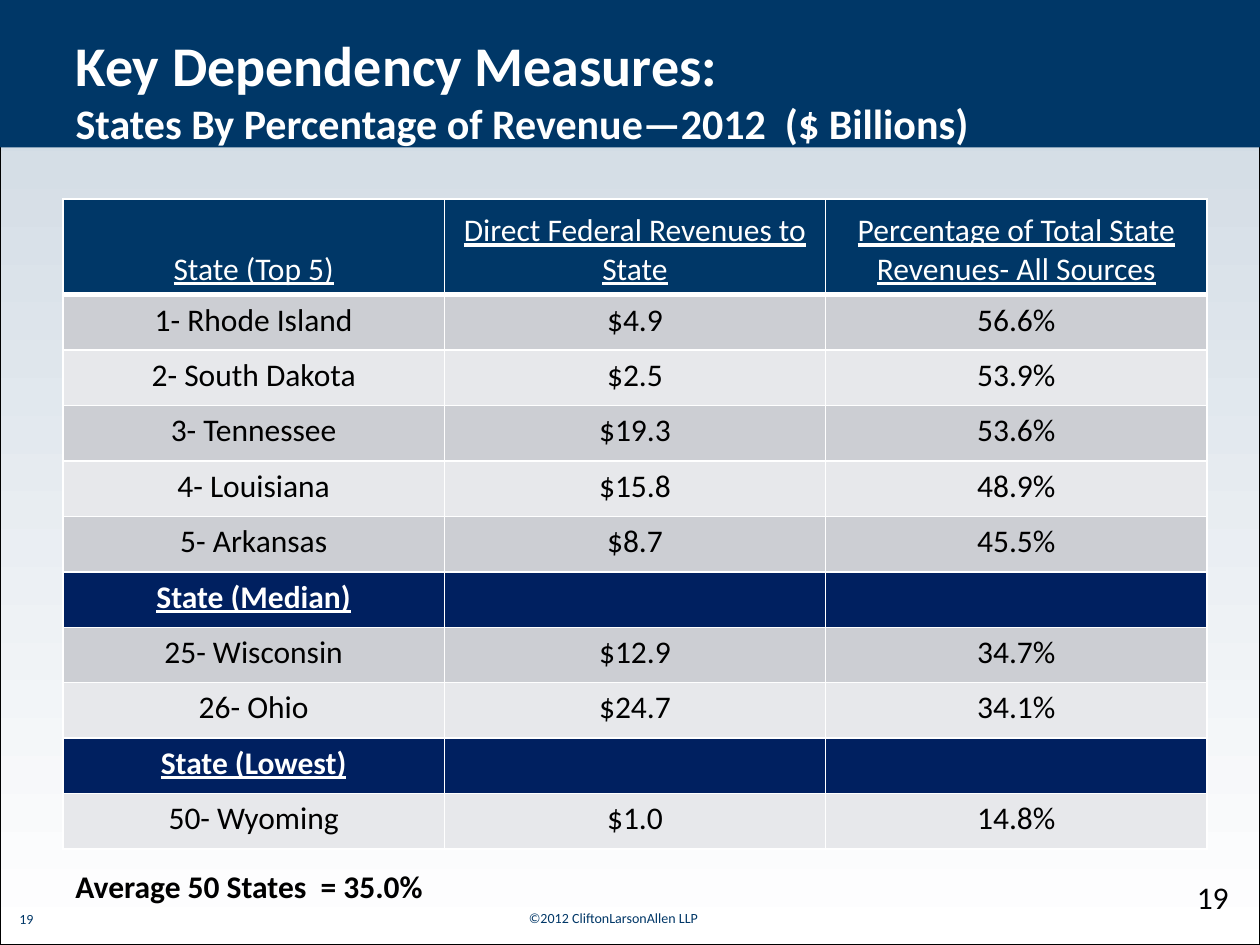
from typing import NamedTuple

from lxml import etree
from pptx import Presentation
from pptx.dml.color import RGBColor
from pptx.enum import shapes, text
from pptx.oxml.ns import qn
from pptx.util import Inches, Pt

HUES = {
    "navy": "003767", "deep": "002060", "dark": "CCCED3", "light": "E7E8EB",
    "white": "FFFFFF", "black": "000000", "sky": "CCD7E1",
}
ALIGN = text.PP_ALIGN
ANCHOR = text.MSO_ANCHOR


class Row(NamedTuple):
    state: str
    money: str = ""
    share: str = ""


class Note(NamedTuple):
    words: str
    box: tuple[float, float, float, float]
    size: int
    hue: str
    bold: bool = False
    align: ALIGN = ALIGN.LEFT


HEAD = Row("State (Top 5)", "Direct Federal Revenues to State",
           "Percentage of Total State Revenues- All Sources")
ROWS = [
    Row("1- Rhode Island", "$4.9", "56.6%"),
    Row("2- South Dakota", "$2.5", "53.9%"),
    Row("3- Tennessee", "$19.3", "53.6%"),
    Row("4- Louisiana", "$15.8", "48.9%"),
    Row("5- Arkansas", "$8.7", "45.5%"),
    Row("State (Median)"),
    Row("25- Wisconsin", "$12.9", "34.7%"),
    Row("26- Ohio", "$24.7", "34.1%"),
    Row("State (Lowest)"),
    Row("50- Wyoming", "$1.0", "14.8%"),
]
NOTES = [
    Note("©2012 CliftonLarsonAllen LLP", (4.08, 7.17, 1.58, 0.24), 8, "navy",
         align=ALIGN.CENTER),
    Note("19", (0, 7.18, 0.42, 0.24), 8, "navy", align=ALIGN.CENTER),
    Note("19", (9.4, 6.92, 0.55, 0.4), 18, "black"),
    Note("Average 50 States  = 35.0%", (0.5, 6.83, 3.08, 0.4), 18, "black", True),
]


def rgb(hue: str) -> RGBColor:
    return RGBColor.from_string(HUES[hue])


def write(para, words: str, *, size: int, hue: str, bold: bool = False,
          line: bool = False, align: ALIGN = ALIGN.LEFT) -> None:
    para.alignment = align
    # An empty cell keeps its size through the paragraph font
    part = para.add_run() if words else para
    if words:
        part.text = words
    font = part.font
    font.name, font.size = "Calibri", Pt(size)
    font.bold, font.underline = bold, line
    font.color.rgb = rgb(hue)


def add_box(slide, box: tuple, fill: str = "", edge: str = "") -> None:
    shape = slide.shapes.add_shape(shapes.MSO_SHAPE.RECTANGLE, *map(Inches, box))
    shape.shadow.inherit = False
    if fill:
        shape.fill.solid()
        shape.fill.fore_color.rgb = rgb(fill)
    else:
        shape.fill.background()
    if edge:
        shape.line.color.rgb = rgb(edge)
        shape.line.width = Pt(0.75)
    else:
        shape.line.fill.background()


def add_note(slide, note: Note) -> None:
    frame = slide.shapes.add_textbox(*map(Inches, note.box)).text_frame
    frame.word_wrap = True
    write(frame.paragraphs[0], note.words, size=note.size, hue=note.hue,
          bold=note.bold, align=note.align)


def set_edges(cell, base: int = 1) -> None:
    props = cell._tc.get_or_add_tcPr()
    for spot, side in enumerate(("lnL", "lnR", "lnT", "lnB")):
        width = base if side == "lnB" else 1
        edge = etree.Element(qn(f"a:{side}"), w=str(Pt(width)))
        fill = etree.SubElement(edge, qn("a:solidFill"))
        etree.SubElement(fill, qn("a:srgbClr"), val=HUES["white"])
        props.insert(spot, edge)


def add_grid(slide) -> None:
    rows = [HEAD, *ROWS]
    grid = slide.shapes.add_table(len(rows), len(HEAD), Inches(0.5), Inches(1.58),
                                  Inches(9.08), Inches(5.17)).table
    for col in grid.columns:
        col.width = Inches(9.08 / len(HEAD))
    for num, row in enumerate(rows):
        top = num == 0
        group = not row.money
        grid.rows[num].height = Inches(0.76 if top else 0.44)
        band = "dark" if num % 2 else "light"
        fill = "navy" if top else "deep" if group else band
        for cell, words in zip(grid.rows[num].cells, row):
            cell.fill.solid()
            cell.fill.fore_color.rgb = rgb(fill)
            cell.vertical_anchor = ANCHOR.BOTTOM if top else ANCHOR.TOP
            write(cell.text_frame.paragraphs[0], words, size=18,
                  hue="white" if top or group else "black", bold=group,
                  line=top or group, align=ALIGN.CENTER)
            set_edges(cell, 3 if top else 1)


def set_title(slide) -> None:
    title = slide.shapes.title
    slide.shapes._spTree.append(title._element)  # in front of the band
    title.left, title.top, title.width, title.height = map(
        Inches, (0.5, 0.33, 9, 0.75))
    frame = title.text_frame
    frame.auto_size = text.MSO_AUTO_SIZE.NONE
    frame.vertical_anchor = ANCHOR.MIDDLE
    para = frame.paragraphs[0]
    write(para, "Key Dependency Measures: ", size=32, hue="white", bold=True)
    para.add_line_break()
    write(para, "States By Percentage of Revenue—2012  ($ Billions)",
          size=24, hue="white", bold=True)


def main() -> None:
    deck = Presentation()
    deck.slide_width, deck.slide_height = Inches(10), Inches(7.5)
    slide = deck.slides.add_slide(deck.slide_layouts[5])

    # Background fading downwards
    back = slide.background.fill
    back.gradient()
    back.gradient_angle = 270
    for stop, hue, spot in zip(back.gradient_stops, ("sky", "white"), (0, 1)):
        stop.color.rgb = rgb(hue)
        stop.position = spot

    # Frame, title band and title
    add_box(slide, (0, 0, 10, 7.5), edge="black")
    add_box(slide, (0, 0, 10, 1.17), fill="navy")
    set_title(slide)

    # Table and notes
    add_grid(slide)
    for note in NOTES:
        add_note(slide, note)
    deck.save("out.pptx")


if __name__ == "__main__":
    main()
